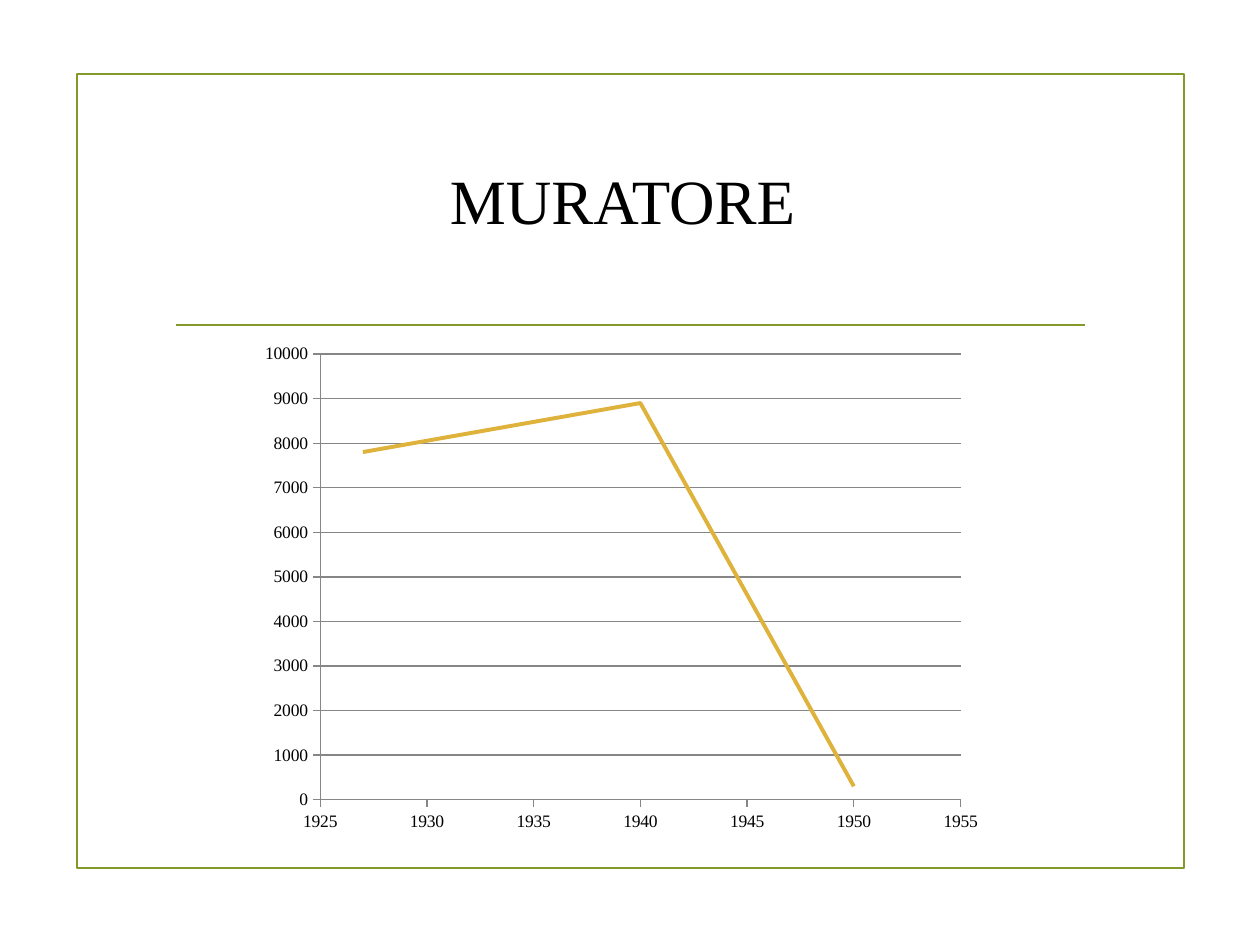
from lxml import etree
from pptx import Presentation
from pptx.chart.data import XyChartData
from pptx.dml.color import RGBColor
from pptx.enum.chart import XL_CHART_TYPE, XL_MARKER_STYLE, XL_TICK_MARK
from pptx.enum.shapes import MSO_CONNECTOR, MSO_SHAPE
from pptx.enum.text import MSO_ANCHOR, PP_ALIGN
from pptx.oxml import parse_xml
from pptx.oxml.ns import nsdecls, qn
from pptx.util import Inches, Pt

SMOOTH_SCATTER = XL_CHART_TYPE.XY_SCATTER_SMOOTH_NO_MARKERS
NO_MARKER = XL_MARKER_STYLE.NONE
TICK_OUTSIDE, TICK_NONE = XL_TICK_MARK.OUTSIDE, XL_TICK_MARK.NONE

GREEN = RGBColor(0x83, 0x99, 0x2A)
GOLD = RGBColor(0xDF, 0xB2, 0x3C)
GRAY = RGBColor(0x86, 0x86, 0x86)
BLACK = RGBColor(0, 0, 0)
FONT = "Times New Roman"

TITLE = "MURATORE"
POINTS = [(1927, 7800), (1940, 8900), (1950, 300)]
YEARS = (1925, 1955, 5)
VALUES = (0, 10000, 1000)

TITLE_BOX = (3.47, 1.23, 2.97, 1.31)
FRAME_BOX = (0.61, 0.59, 8.79, 6.3)
RULE = (1.4, 2.58, 8.61, 2.58)
CHART_BOX = (2.01, 2.65, 5.91, 4.02)
PLOT_SHARES = {"x": 0.09, "y": 0.04, "w": 0.86, "h": 0.88}


def inches(lengths):
    return [Inches(length) for length in lengths]


def style_line(line, color, width):
    line.color.rgb = color
    line.width = Pt(width)


def style_axis(axis, scale):
    axis.minimum_scale, axis.maximum_scale, axis.major_unit = scale
    axis.major_tick_mark, axis.minor_tick_mark = TICK_OUTSIDE, TICK_NONE
    axis.tick_labels.font.size = Pt(10)
    axis.tick_labels.number_format = "General"
    axis.tick_labels.number_format_is_linked = False
    style_line(axis.format.line, GRAY, 0.75)


def place_plot(chart, shares):
    """Fix the inner plot area at the given shares of the chart's size."""
    plot_area = chart.plots[0]._element.getparent()
    for old_layout in plot_area.findall(qn("c:layout")):
        plot_area.remove(old_layout)
    layout = parse_xml(f"<c:layout {nsdecls('c')}><c:manualLayout/></c:layout>")
    settings = {"layoutTarget": "inner", "xMode": "edge", "yMode": "edge", **shares}
    for name, value in settings.items():
        etree.SubElement(layout[0], qn(f"c:{name}")).set("val", str(value))
    plot_area.insert(0, layout)


def add_frame(slide):
    frame = slide.shapes.add_shape(MSO_SHAPE.RECTANGLE, *inches(FRAME_BOX))
    frame.shadow.inherit = False
    frame.fill.background()
    style_line(frame.line, GREEN, 1.25)

    rule = slide.shapes.add_connector(MSO_CONNECTOR.STRAIGHT, *inches(RULE))
    style_line(rule.line, GREEN, 1.25)
    etree.SubElement(rule._element.spPr, qn("a:effectLst"))


def add_title(slide):
    title = slide.shapes.title
    title.left, title.top, title.width, title.height = inches(TITLE_BOX)
    text_frame = title.text_frame
    text_frame.text = TITLE
    text_frame.word_wrap = False
    text_frame.vertical_anchor = MSO_ANCHOR.TOP
    paragraph = text_frame.paragraphs[0]
    paragraph.alignment = PP_ALIGN.LEFT
    font = paragraph.runs[0].font
    font.name, font.size, font.color.rgb = FONT, Pt(36), BLACK


def add_curve(slide):
    data = XyChartData()
    series_data = data.add_series("Series 1")
    for year, value in POINTS:
        series_data.add_data_point(year, value)
    chart = slide.shapes.add_chart(SMOOTH_SCATTER, *inches(CHART_BOX), data).chart
    chart.has_title = chart.has_legend = False
    chart.font.name, chart.font.size, chart.font.color.rgb = FONT, Pt(18), BLACK

    style_axis(chart.category_axis, YEARS)
    style_axis(chart.value_axis, VALUES)
    chart.category_axis.has_major_gridlines = False
    chart.value_axis.has_major_gridlines = True
    style_line(chart.value_axis.major_gridlines.format.line, GRAY, 0.75)

    plot = chart.plots[0]
    plot.vary_by_categories = False
    series = plot.series[0]
    series.smooth = True
    series.marker.style = NO_MARKER
    style_line(series.format.line, GOLD, 2.25)
    place_plot(chart, PLOT_SHARES)


def main():
    presentation = Presentation()
    presentation.slide_width, presentation.slide_height = Inches(10), Inches(7.5)
    slide = presentation.slides.add_slide(presentation.slide_layouts[5])
    add_frame(slide)
    add_curve(slide)
    add_title(slide)
    presentation.save("out.pptx")


if __name__ == "__main__":
    main()
